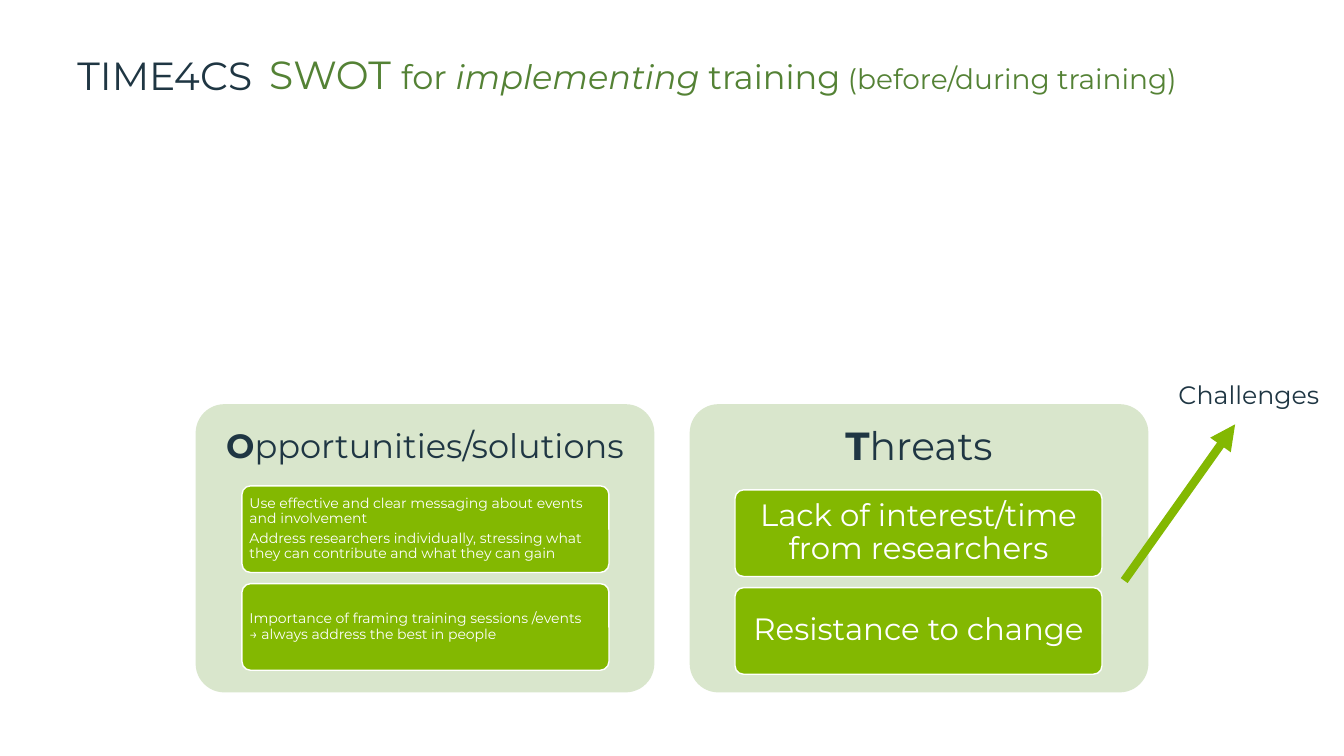
"""Build the TIME4CS slide on opportunities and threats for training."""
from lxml import etree
from pptx import Presentation
from pptx.dml.color import RGBColor
from pptx.enum.shapes import MSO_CONNECTOR, MSO_SHAPE
from pptx.enum.text import MSO_ANCHOR, MSO_AUTO_SIZE, PP_ALIGN
from pptx.oxml.ns import qn
from pptx.util import Inches, Pt

ROUND = MSO_SHAPE.ROUNDED_RECTANGLE
LINE = MSO_CONNECTOR.STRAIGHT
TOP, MIDDLE = MSO_ANCHOR.TOP, MSO_ANCHOR.MIDDLE
LEFT, CENTER = PP_ALIGN.LEFT, PP_ALIGN.CENTER
FIXED = MSO_AUTO_SIZE.NONE
FONT = "Montserrat"
COLORS = {
    "navy": "1F3643",
    "green": "548235",
    "lime": "83B801",
    "pale": "D9E6CC",
    "white": "FFFFFF",
}
PANEL = (4.55, 2.86)
CARD = (3.64, 0.86)
STEP = 0.97


def color(name):
    """Return the named colour."""
    return RGBColor.from_string(COLORS[name])


def add_run(para, text, size, tone, bold=False, italic=False):
    """Add one formatted run."""
    run = para.add_run()
    run.text = text
    font = run.font
    font.name, font.size = FONT, Pt(size)
    font.bold, font.italic = bold, italic
    font.color.rgb = color(tone)


def set_frame(frame, insets, anchor):
    """Set wrapping, insets and anchor of a text frame."""
    frame.word_wrap = True
    frame.auto_size = FIXED
    frame.vertical_anchor = anchor
    (frame.margin_left, frame.margin_top,
     frame.margin_right, frame.margin_bottom) = map(Inches, insets)


def set_para(para, align, after=0, space=0.9):
    """Set alignment and spacing of a paragraph."""
    para.alignment = align
    para.line_spacing = space
    para.space_before, para.space_after = Pt(0), Pt(after)


def add_label(slide, box, text, size, space=0.9):
    """Add a plain text label."""
    frame = slide.shapes.add_textbox(*map(Inches, box)).text_frame
    set_frame(frame, (0.1, 0.05, 0.1, 0.05), TOP)
    para = frame.paragraphs[0]
    set_para(para, LEFT, space=space)
    add_run(para, text, size, "navy")


def add_round(slide, left, top, size, fill, insets):
    """Add a rounded box and return it."""
    shape = slide.shapes.add_shape(ROUND, *map(Inches, (left, top, *size)))
    shape.adjustments[0] = 0.1
    shape.shadow.inherit = False
    shape.fill.solid()
    shape.fill.fore_color.rgb = color(fill)
    shape.line.fill.background()
    set_frame(shape.text_frame, insets, MIDDLE)
    return shape


def add_panel(slide, left, head, size, inset):
    """Add a pale panel whose heading starts with a bold letter."""
    insets = (inset, inset, inset, inset + 2)
    panel = add_round(slide, left, 4.01, PANEL, "pale", insets)
    para = panel.text_frame.paragraphs[0]
    set_para(para, CENTER, size * 0.35)
    add_run(para, head[0], size, "navy", bold=True)
    add_run(para, head[1:], size, "navy")


def add_card(slide, left, top, paras, size, align, insets):
    """Add a lime card; each paragraph is a list of lines."""
    card = add_round(slide, left, top, CARD, "lime", insets)
    card.line.color.rgb = color("white")
    card.line.width = Pt(1)
    frame = card.text_frame
    for index, lines in enumerate(paras):
        para = frame.add_paragraph() if index else frame.paragraphs[0]
        set_para(para, align, size * 0.35)
        for row, text in enumerate(lines):
            if row:
                para.add_line_break()
            add_run(para, text, size, "white")


def add_stack(slide, left, top, cards, size, align, insets):
    """Add cards below one another at equal steps."""
    for index, paras in enumerate(cards):
        add_card(slide, left, top + index * STEP, paras, size, align, insets)


def add_arrow(slide, start, end):
    """Add a thick lime arrow."""
    arrow = slide.shapes.add_connector(LINE, *map(Inches, (*start, *end)))
    arrow.line.color.rgb = color("lime")
    arrow.line.width = Pt(6)
    etree.SubElement(arrow.line._get_or_add_ln(), qn("a:tailEnd"), type="triangle")
    etree.SubElement(arrow._element.spPr, qn("a:effectLst"))


def fill_title(slide):
    """Place the title and write its runs."""
    title = slide.shapes.title
    title.left, title.top, title.width, title.height = map(
        Inches, (2.57, 0.5, 10.09, 0.46))
    set_frame(title.text_frame, (0.1, 0.05, 0.1, 0.05), TOP)
    para = title.text_frame.paragraphs[0]
    set_para(para, LEFT)
    add_run(para, "SWOT ", 28, "green")
    add_run(para, "for ", 24, "green")
    add_run(para, "implementing", 24, "green", italic=True)
    add_run(para, " training", 24, "green")
    add_run(para, " (before/during training)", 20, "green")


def main():
    """Build and save the slide."""
    deck = Presentation()
    deck.slide_width, deck.slide_height = Inches(13.33), Inches(7.5)
    slide = deck.slides.add_slide(deck.slide_layouts[5])
    add_label(slide, (0.67, 0.46, 2.03, 0.57), "TIME4CS", 28, space=1.0)
    fill_title(slide)
    add_panel(slide, 6.84, "Threats", 28, 0.12)
    add_panel(slide, 1.94, "Opportunities/solutions", 24, 0.1)
    threats = [
        [["Lack of interest/time from researchers"]],
        [["Resistance to change"]],
    ]
    add_stack(slide, 7.29, 4.86, threats, 22, CENTER, (0.09, 0.07, 0.09, 0.07))
    chances = [
        [["Use effective and clear messaging about events and involvement"],
         ["Address researchers individually, stressing what they can "
          "contribute and what they can gain"]],
        [["Importance of framing training sessions /events",
          "→ always address the best in people"]],
    ]
    add_stack(slide, 2.4, 4.82, chances, 10, LEFT, (0.05,) * 4)
    add_label(slide, (11.59, 3.75, 1.67, 0.46), "Challenges", 18)
    add_arrow(slide, (11.15, 5.76), (12.25, 4.21))
    deck.save("out.pptx")


if __name__ == "__main__":
    main()
